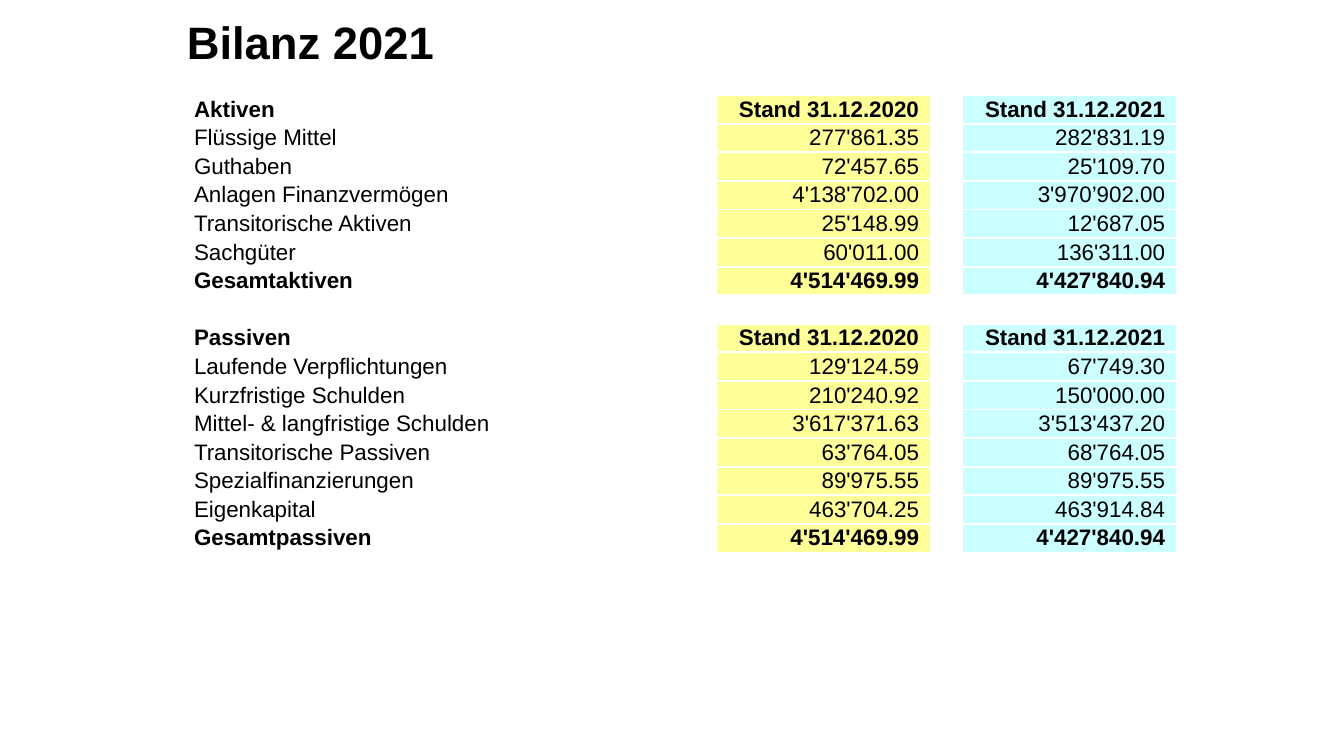
"""Build the balance sheet slide "Bilanz 2021"."""
from dataclasses import dataclass

import lxml.etree
import pptx
import pptx.dml.color
import pptx.enum.text
import pptx.oxml.ns
import pptx.table
import pptx.util
from pptx.util import Cm

COLORS = {"text": "000000", "border": "FFFFFF", "2020": "FFFF99", "2021": "CCFFFF"}
FONT = "Arial"
TABLE_SIZE = 16
COLUMN_WIDTHS = (13.45, 5.4, 0.8, 5.4)
COLUMN_FILLS = (None, "2020", None, "2021")
ROW_HEIGHT = 0.72


@dataclass
class BalanceRow:
    label: str = ""
    year_2020: str = ""
    year_2021: str = ""
    bold: bool = False

    @property
    def texts(self) -> tuple[str, str, str, str]:
        return self.label, self.year_2020, "", self.year_2021


def header_row(label: str) -> BalanceRow:
    return BalanceRow(label, "Stand 31.12.2020", "Stand 31.12.2021", True)


ROWS = (
    header_row("Aktiven"),
    BalanceRow("Flüssige Mittel", "277'861.35", "282'831.19"),
    BalanceRow("Guthaben", "72'457.65", "25'109.70"),
    BalanceRow("Anlagen Finanzvermögen", "4'138'702.00", "3'970’902.00"),
    BalanceRow("Transitorische Aktiven", "25'148.99", "12'687.05"),
    BalanceRow("Sachgüter", "60'011.00", "136'311.00"),
    BalanceRow("Gesamtaktiven", "4'514'469.99", "4'427'840.94", True),
    BalanceRow(),
    header_row("Passiven"),
    BalanceRow("Laufende Verpflichtungen", "129'124.59", "67'749.30"),
    BalanceRow("Kurzfristige Schulden", "210'240.92", "150'000.00"),
    BalanceRow("Mittel- & langfristige Schulden", "3'617'371.63", "3'513'437.20"),
    BalanceRow("Transitorische Passiven", "63'764.05", "68'764.05"),
    BalanceRow("Spezialfinanzierungen", "89'975.55", "89'975.55"),
    BalanceRow("Eigenkapital", "463'704.25", "463'914.84"),
    BalanceRow("Gesamtpassiven", "4'514'469.99", "4'427'840.94", True),
)


def rgb(name: str) -> pptx.dml.color.RGBColor:
    return pptx.dml.color.RGBColor.from_string(COLORS[name])


def format_runs(paragraph, size: float, bold: bool) -> None:
    for run in paragraph.runs:
        run.font.name = FONT
        run.font.size = pptx.util.Pt(size)
        run.font.bold = bold
        run.font.color.rgb = rgb("text")


def add_borders(cell: pptx.table._Cell) -> None:
    qn = pptx.oxml.ns.qn
    properties = cell._tc.get_or_add_tcPr()
    for side in ("lnL", "lnR", "lnT", "lnB"):
        line = lxml.etree.SubElement(properties, qn(f"a:{side}"), w=str(pptx.util.Pt(1.5)))
        fill = lxml.etree.SubElement(line, qn("a:solidFill"))
        lxml.etree.SubElement(fill, qn("a:srgbClr"), val=COLORS["border"])


def fill_cell(cell: pptx.table._Cell, row: BalanceRow, column: int) -> None:
    add_borders(cell)
    fill_name = COLUMN_FILLS[column]
    if fill_name and row.label:
        cell.fill.solid()
        cell.fill.fore_color.rgb = rgb(fill_name)
    else:
        cell.fill.background()
    cell.margin_left = cell.margin_right = Cm(0.29)
    cell.margin_top = cell.margin_bottom = 0
    cell.vertical_anchor = pptx.enum.text.MSO_ANCHOR.MIDDLE

    paragraph = cell.text_frame.paragraphs[0]
    text = row.texts[column]
    if not text:
        end_tag = pptx.oxml.ns.qn("a:endParaRPr")
        lxml.etree.SubElement(paragraph._p, end_tag, sz=str(TABLE_SIZE * 100))
        return
    paragraph.text = text
    paragraph.line_spacing = 1.0
    if fill_name:
        paragraph.alignment = pptx.enum.text.PP_ALIGN.RIGHT
    format_runs(paragraph, TABLE_SIZE, row.bold)


def add_title(slide) -> None:
    title = slide.shapes.add_textbox(Cm(4.46), Cm(0.38), Cm(28.3), Cm(1.5))
    frame = title.text_frame
    frame.word_wrap = True
    frame.vertical_anchor = pptx.enum.text.MSO_ANCHOR.MIDDLE
    frame.text = "Bilanz 2021"
    frame.paragraphs[0].line_spacing = 0.9
    format_runs(frame.paragraphs[0], 32.4, True)


def add_balance_table(slide) -> None:
    table = slide.shapes.add_table(
        len(ROWS), len(COLUMN_WIDTHS), Cm(4.6), Cm(2.4),
        Cm(sum(COLUMN_WIDTHS)), Cm(ROW_HEIGHT * len(ROWS)),
    ).table
    table.first_row = table.horz_banding = False
    for column, width in zip(table.columns, COLUMN_WIDTHS):
        column.width = Cm(width)
    for index, row in enumerate(ROWS):
        table.rows[index].height = Cm(ROW_HEIGHT)
        for column in range(len(COLUMN_WIDTHS)):
            fill_cell(table.cell(index, column), row, column)


def main() -> None:
    presentation = pptx.Presentation()
    presentation.slide_width = Cm(33.87)
    presentation.slide_height = Cm(19.05)
    slide = presentation.slides.add_slide(presentation.slide_layouts[6])
    add_title(slide)
    add_balance_table(slide)
    presentation.save("out.pptx")


if __name__ == "__main__":
    main()
